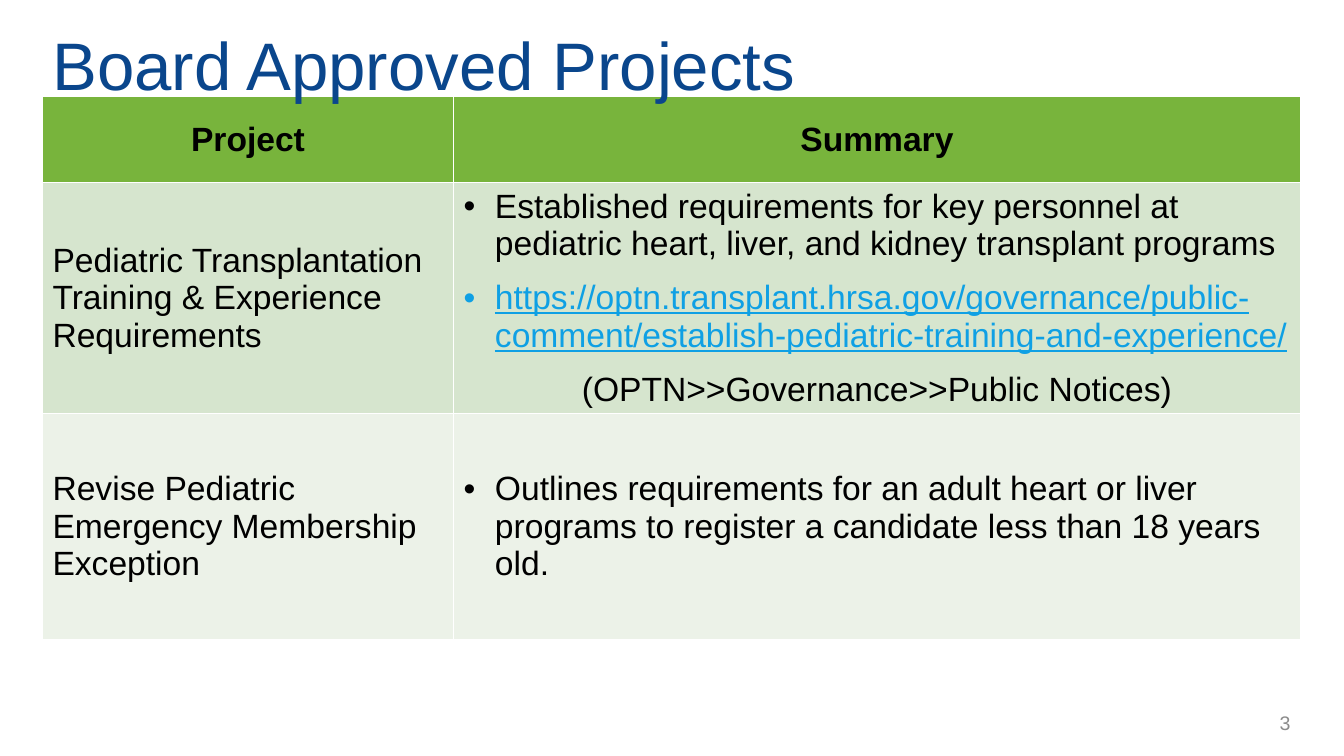
"""Build the slide of board approved projects."""
import pptx
import pptx.dml.color
import pptx.enum.text
import pptx.oxml
import pptx.oxml.ns
import pptx.util

Cm = pptx.util.Cm
Pt = pptx.util.Pt
Align = pptx.enum.text.PP_ALIGN
Middle = pptx.enum.text.MSO_ANCHOR.MIDDLE
colors = {
    "title": "0A468C", "head": "78B43C", "text": "000000",
    "link": "0FA0E4", "number": "8C8C8C",
}
bands = [colors["head"], "D6E5CE", "ECF2E8"]


def style(para, size, color, align=Align.LEFT, bold=False):
    para.alignment = align
    font = para.font
    font.name = "Arial"
    font.size = Pt(size)
    font.bold = bold
    font.color.rgb = pptx.dml.color.RGBColor.from_string(colors[color])


def bullet(para, color):
    props = para._p.get_or_add_pPr()
    props.set("marL", str(Cm(0.79)))
    props.set("indent", str(-Cm(0.79)))
    space = pptx.oxml.ns.nsdecls("a")
    for tag in (
        f'<a:buClr {space}><a:srgbClr val="{colors[color]}"/></a:buClr>',
        f'<a:buFont {space} typeface="Arial"/>',
        f'<a:buChar {space} char="•"/>',
    ):
        props.append(pptx.oxml.parse_xml(tag))


deck = pptx.Presentation()
deck.slide_width = Cm(33.87)
deck.slide_height = Cm(19.05)
slide = deck.slides.add_slide(deck.slide_layouts[6])

rows = [
    ("Project", [("Summary", "head")]),
    ("Pediatric Transplantation Training & Experience Requirements", [
        ("Established requirements for key personnel at pediatric heart, "
         "liver, and kidney transplant programs", "text"),
        ("https://optn.transplant.hrsa.gov/governance/public-comment/"
         "establish-pediatric-training-and-experience/", "link"),
        ("(OPTN>>Governance>>Public Notices)", "center"),
    ]),
    ("Revise Pediatric Emergency Membership Exception", [
        ("Outlines requirements for an adult heart or liver programs to "
         "register a candidate less than 18 years old.", "text"),
    ]),
]
widths = [10.36, 21.34]
heights = [2.16, 5.72, 5.69]
table = slide.shapes.add_table(
    3, 2, Cm(1.07), Cm(2.44), Cm(sum(widths)), Cm(sum(heights))).table
table.horz_banding = False
for col, width in zip(table.columns, widths):
    col.width = Cm(width)

for line, (project, notes) in enumerate(rows):
    table.rows[line].height = Cm(heights[line])
    head = line == 0
    left, right = table.rows[line].cells
    for cell in (left, right):
        cell.vertical_anchor = Middle
        cell.fill.solid()
        cell.fill.fore_color.rgb = pptx.dml.color.RGBColor.from_string(bands[line])
    left.text = project
    style(left.text_frame.paragraphs[0], 24, "text",
          Align.CENTER if head else Align.LEFT, head)
    right.text = "\n".join(text for text, kind in notes)
    for para, (text, kind) in zip(right.text_frame.paragraphs, notes):
        color = "link" if kind == "link" else "text"
        if len(notes) > 1:
            para.space_after = Pt(12)
        if kind in ("text", "link"):
            bullet(para, color)
            style(para, 24, color)
        else:
            style(para, 24, color, Align.CENTER, head)
        para.font.underline = kind == "link"

labels = [
    ("Board Approved Projects", (1.07, 0.43, 32.39, 2.36), 48, "title", Align.LEFT),
    ("3", (27.03, 17.7, 5.74, 1.02), 14, "number", Align.RIGHT),
]
for text, place, size, color, align in labels:
    frame = slide.shapes.add_textbox(*map(Cm, place)).text_frame
    frame.word_wrap = True
    frame.vertical_anchor = Middle
    frame.text = text
    style(frame.paragraphs[0], size, color, align)

deck.save("out.pptx")
